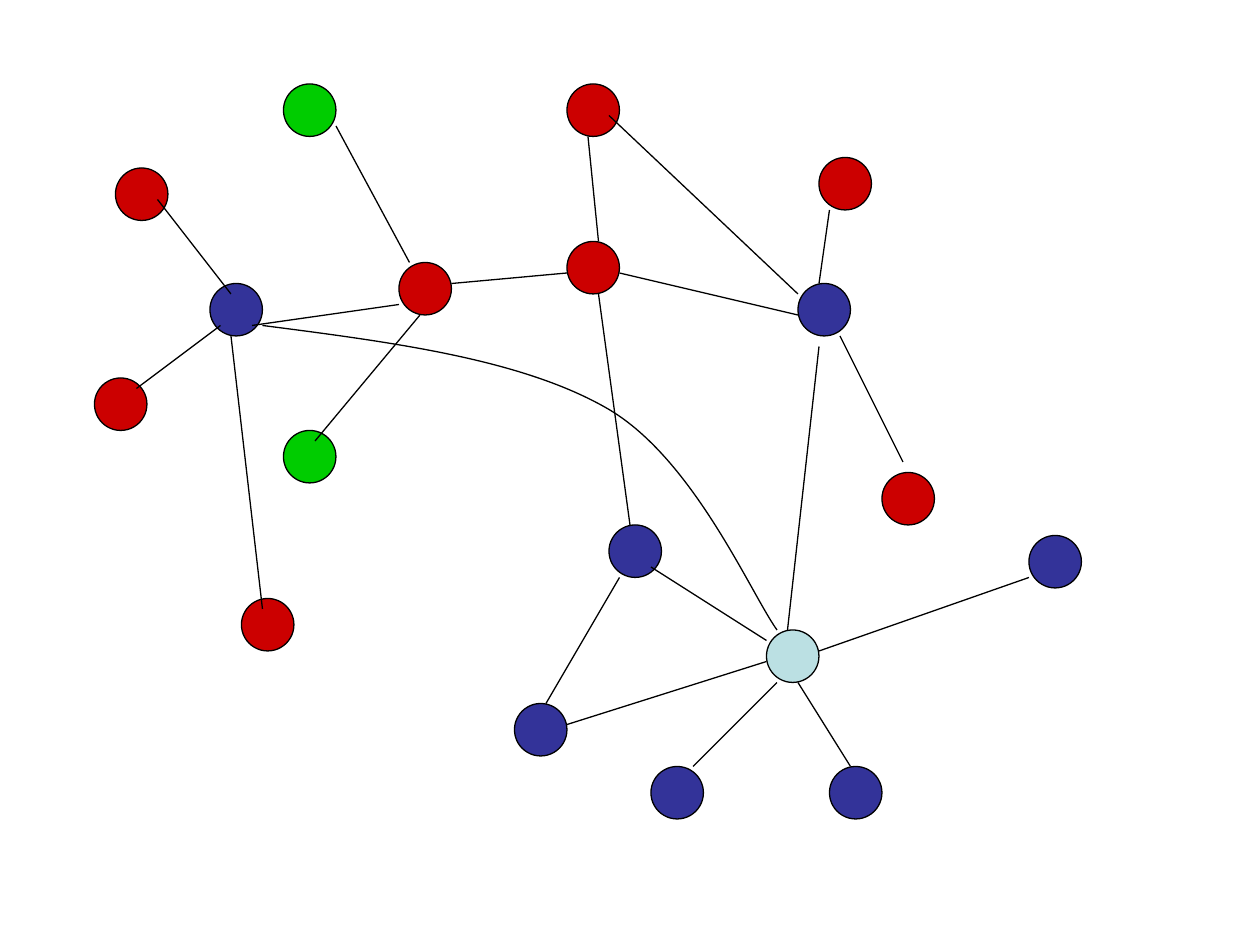
from pptx import Presentation
from pptx.dml.color import RGBColor
from pptx.enum.shapes import MSO_CONNECTOR as Conn, MSO_SHAPE as Shape
from pptx.oxml.ns import qn
from pptx.util import Pt
from lxml.etree import SubElement as sub

PX = 914400 // 120  # EMU in one px, 120 px to the inch
SIZE = 50           # node diameter
BLACK, RED, BLUE, GREEN, PALE = "000000", "CC0000", "333399", "00CC00", "BBE0E3"

# Left and top of the nodes of each colour
NODES = {
    RED: [(380, 250), (110, 160), (780, 150), (230, 570), (540, 230),
          (540, 80), (90, 360), (840, 450)],
    BLUE: [(200, 270), (980, 510), (490, 670), (580, 500), (760, 270),
           (620, 730), (790, 730)],
    GREEN: [(270, 80), (270, 410)],
    PALE: [(730, 600)],
}

# Straight links: x1, y1, x2, y2
LINKS = [
    # right cluster
    (780, 330, 750, 600), (760, 280, 580, 110), (780, 270, 790, 200),
    (590, 260, 760, 300), (800, 320, 860, 440),
    # around the pale hub
    (780, 620, 980, 550), (760, 650, 810, 730), (740, 650, 660, 730),
    (540, 690, 730, 630), (620, 540, 730, 610), (590, 550, 520, 670),
    # left cluster
    (220, 320, 250, 580), (240, 310, 380, 290), (150, 190, 220, 280),
    (210, 310, 130, 370), (400, 300, 300, 420), (320, 120, 390, 250),
    # centre
    (560, 130, 570, 230), (430, 270, 540, 260), (570, 280, 600, 500),
]

# Curved link: start, then two controls and an end for each segment
START = (250, 310)
CURVE = [((374, 326), (498, 342), (580, 390)),
         ((661, 438), (715, 565), (740, 600))]


def rgb(code):
    return RGBColor.from_string(code)


def stroke(item):
    item.line.color.rgb = rgb(BLACK)
    item.line.width = Pt(0.75)


def node(slide, x, y, color):
    dot = slide.shapes.add_shape(Shape.OVAL, x * PX, y * PX, SIZE * PX, SIZE * PX)
    dot.shadow.inherit = False
    dot.fill.solid()
    dot.fill.fore_color.rgb = rgb(color)
    stroke(dot)


def link(slide, *ends):
    line = slide.shapes.add_connector(Conn.STRAIGHT, *(v * PX for v in ends))
    stroke(line)
    sub(line._element.spPr, qn("a:effectLst"))


def curve(slide, start, parts):
    form = slide.shapes.build_freeform(*start, scale=PX)
    form.add_line_segments([part[-1] for part in parts], close=False)
    arc = form.convert_to_shape()
    arc.shadow.inherit = False
    arc.fill.background()
    stroke(arc)
    # Turn each straight segment into a cubic one
    for seg, part in zip(list(arc._element.iter(qn("a:lnTo"))), parts):
        seg.tag = qn("a:cubicBezTo")
        for old in list(seg):
            seg.remove(old)
        for x, y in part:
            sub(seg, qn("a:pt"), x=str(x - start[0]), y=str(y - start[1]))


def main():
    deck = Presentation()
    deck.slide_width, deck.slide_height = 1200 * PX, 900 * PX
    slide = deck.slides.add_slide(deck.slide_layouts[6])
    for color, spots in NODES.items():
        for x, y in spots:
            node(slide, x, y, color)
    for ends in LINKS:
        link(slide, *ends)
    curve(slide, START, CURVE)
    deck.save("out.pptx")


if __name__ == "__main__":
    main()
